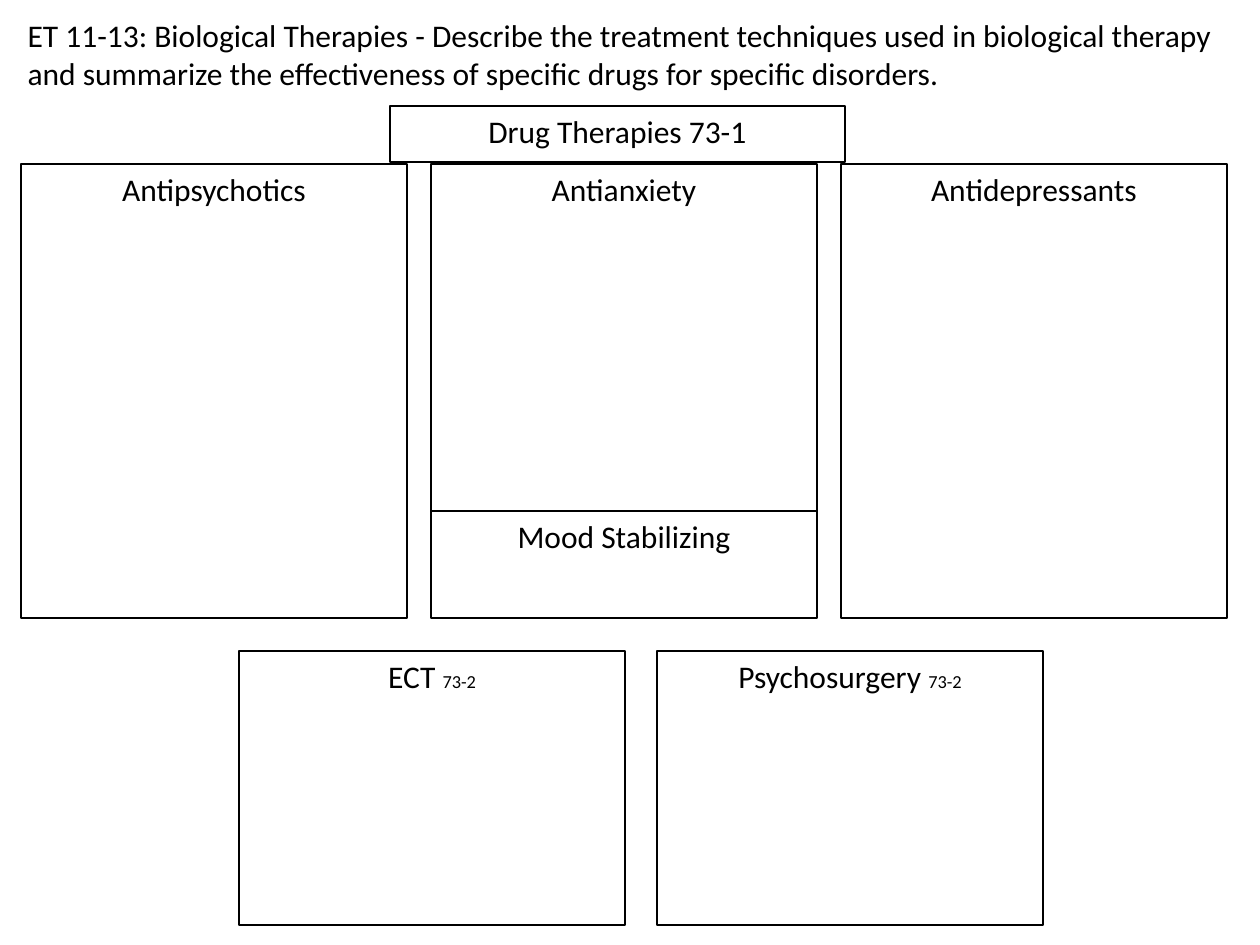
from pptx import Presentation
from pptx.dml.color import RGBColor
from pptx.enum.shapes import MSO_SHAPE as SHAPE
from pptx.enum.text import MSO_ANCHOR as ANCHOR, MSO_AUTO_SIZE as AUTO, PP_ALIGN as ALIGN
from pptx.util import Pt

PX = 914400 / 126
BLACK = RGBColor(0, 0, 0)
WHITE = RGBColor(255, 255, 255)

COL_W, COL_STEP, COL_LEFT = 386, 410, 21
COL_TOP, COL_H, ANTIANXIETY_H = 164, 454, 347
LOWER_LEFT, LOWER_STEP, LOWER_TOP, LOWER_H = 239, 418, 651, 274


def place(sp, x, y, w, h):
    sp.left, sp.top, sp.width, sp.height = (round(v * PX) for v in (x, y, w, h))


def style_text(sp, text, align):
    """Write top-anchored text and return its paragraph."""
    tf = sp.text_frame
    tf.word_wrap = True
    tf.auto_size = AUTO.NONE
    tf.vertical_anchor = ANCHOR.TOP
    p = tf.paragraphs[0]
    p.alignment = align
    p.font.name = "Calibri"
    p.font.size = Pt(18)
    p.font.color.rgb = BLACK
    p.add_run().text = text
    return p


prs = Presentation()
prs.slide_width, prs.slide_height = round(1260 * PX), round(945 * PX)
s = prs.slides.add_slide(prs.slide_layouts[5])

title = s.shapes.title
place(title, 15, 10, 1245, 89)
style_text(title, "ET 11-13: Biological Therapies - Describe the treatment techniques "
           "used in biological therapy and summarize the effectiveness of specific "
           "drugs for specific disorders.", ALIGN.LEFT)

middle, right = COL_LEFT + COL_STEP, COL_LEFT + 2 * COL_STEP
boxes = [
    ("Antipsychotics", "", COL_LEFT, COL_TOP, COL_W, COL_H),
    ("Antianxiety", "", middle, COL_TOP, COL_W, ANTIANXIETY_H),
    ("Antidepressants", "", right, COL_TOP, COL_W, COL_H),
    ("ECT ", "73-2", LOWER_LEFT, LOWER_TOP, COL_W, LOWER_H),
    ("Psychosurgery ", "73-2", LOWER_LEFT + LOWER_STEP, LOWER_TOP, COL_W, LOWER_H),
    ("Drug Therapies 73-1", "", 390, 106, 455, 56),
    ("Mood Stabilizing", "", middle, COL_TOP + ANTIANXIETY_H, COL_W, COL_H - ANTIANXIETY_H),
]
for heading, section, *bounds in boxes:
    sp = s.shapes.add_shape(SHAPE.RECTANGLE, 0, 0, 0, 0)
    place(sp, *bounds)
    sp.shadow.inherit = False
    sp.fill.solid()
    sp.fill.fore_color.rgb = WHITE
    sp.line.color.rgb = BLACK
    sp.line.width = Pt(1)
    p = style_text(sp, heading, ALIGN.CENTER)
    if section:
        r = p.add_run()
        r.text = section
        r.font.size = Pt(10.5)

prs.save("out.pptx")
